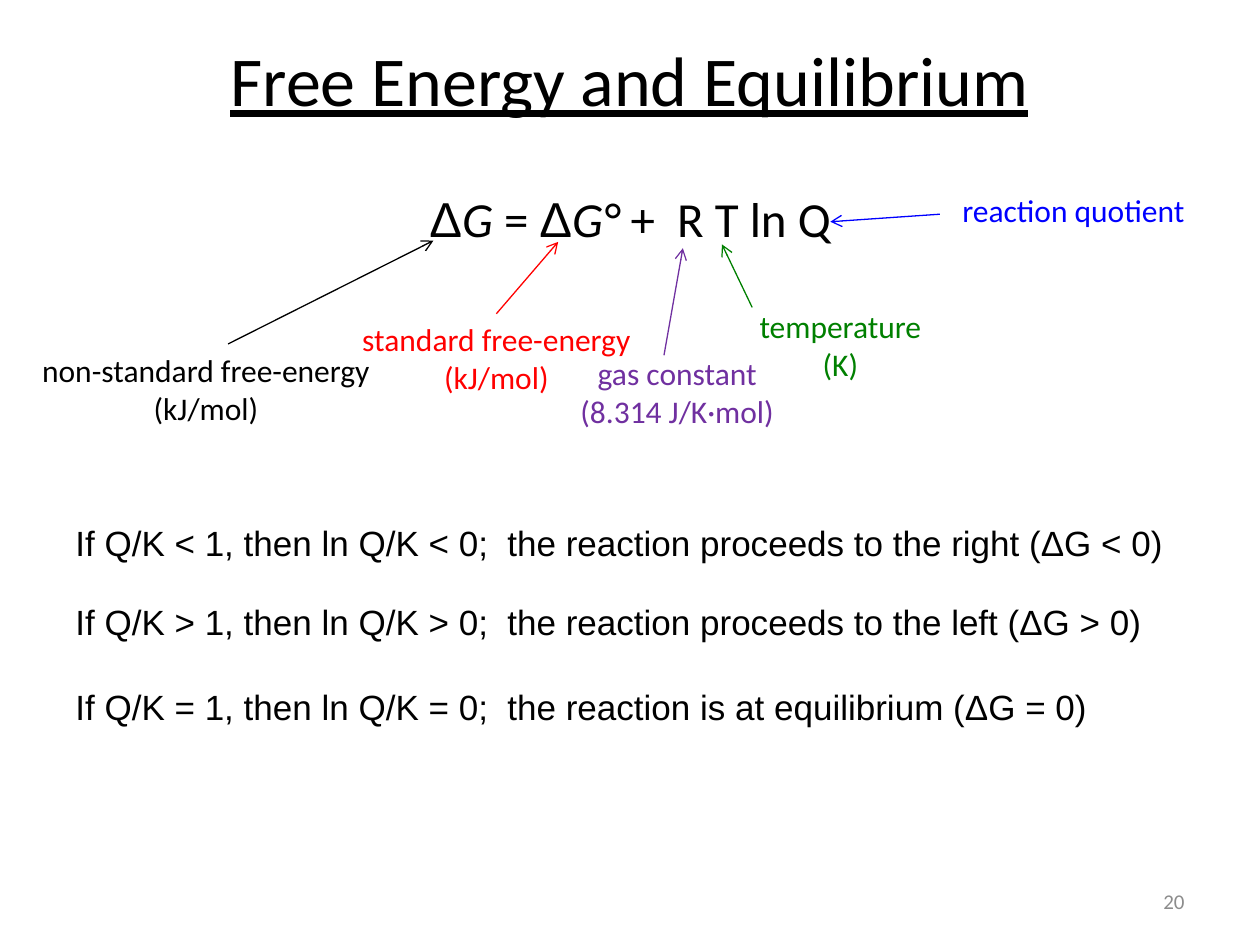
from lxml.etree import SubElement
from pptx import Presentation
from pptx.dml.color import RGBColor
from pptx.enum.shapes import MSO_CONNECTOR
from pptx.enum.text import MSO_ANCHOR, MSO_AUTO_SIZE, PP_ALIGN
from pptx.oxml.ns import qn
from pptx.util import Inches, Pt

TITLE = "Free Energy and Equilibrium"
PAGE_NUMBER = "20"
EQUATION = [
    ("Δ", "Arial", False),
    ("G ", "Calibri", True),
    ("= ", "Calibri", False),
    ("Δ", "Arial", False),
    ("G°", "Calibri", True),
    (" +  R T ln Q", "Calibri", False),
]
TERMS = [
    {"lines": ["standard free-energy", "(kJ/mol)"], "color": "FF0000",
     "place": (2.76, 2.49, 2.36), "arrow": (3.94, 2.49, 4.43, 1.92)},
    {"lines": ["gas constant", "(8.314 J/K·mol)"], "color": "7030A0",
     "place": (4.49, 2.76, 1.77), "arrow": (5.27, 2.82, 5.42, 1.97)},
    {"lines": ["temperature", "(K)"], "color": "008000",
     "place": (5.91, 2.39, 1.52), "arrow": (5.97, 2.44, 5.73, 1.94)},
    {"lines": ["reaction quotient"], "color": "0000FF",
     "place": (7.5, 1.47, 2.04), "arrow": (7.46, 1.7, 6.59, 1.76)},
    {"lines": ["non-standard free-energy", "(kJ/mol)"], "color": "000000",
     "place": (0.22, 2.74, 2.83), "arrow": (1.81, 2.73, 3.44, 1.91)},
]
CASES = [
    (4.09, "<", "the reaction proceeds to the right"),
    (4.72, ">", "the reaction proceeds to the left"),
    (5.39, "=", "the reaction is at equilibrium"),
]
ONE_LINE = {"word_wrap": False, "auto_size": MSO_AUTO_SIZE.SHAPE_TO_FIT_TEXT}


def rgb(color):
    return RGBColor.from_string(color)


def add_span(para, text, color="000000", **font_format):
    span = para.add_run()
    span.text = text
    span.font.color.rgb = rgb(color)
    for name, value in font_format.items():
        setattr(span.font, name, value)


def add_box(page, place, **frame_format):
    frame = page.shapes.add_textbox(*map(Inches, place)).text_frame
    for name, value in frame_format.items():
        setattr(frame, name, value)
    return frame


def add_arrow(page, ends, color):
    arrow = page.shapes.add_connector(MSO_CONNECTOR.STRAIGHT, *map(Inches, ends))
    arrow.line.color.rgb = rgb(color)
    arrow.line.width = Pt(0.75)
    SubElement(arrow.line._get_or_add_ln(), qn("a:tailEnd"), type="arrow")
    SubElement(arrow._element.spPr, qn("a:effectLst"))


def add_title(page):
    title = page.shapes.title
    bounds = {"left": 1.27, "top": 0, "width": 7.45, "height": 1.25}
    for name, value in bounds.items():
        setattr(title, name, Inches(value))
    frame = title.text_frame
    frame.auto_size = MSO_AUTO_SIZE.NONE
    frame.vertical_anchor = MSO_ANCHOR.MIDDLE
    para = frame.paragraphs[0]
    para.alignment = PP_ALIGN.CENTER
    para.space_before = Pt(8)
    add_span(para, TITLE, name="Calibri", size=Pt(40), underline=True)


def add_term(page, term):
    lines, color = term["lines"], term["color"]
    height = 0.1 + 0.3 * len(lines)
    frame = add_box(page, (*term["place"], height), **ONE_LINE)
    for index, line in enumerate(lines):
        para = frame.add_paragraph() if index else frame.paragraphs[0]
        para.alignment = PP_ALIGN.CENTER
        add_span(para, line, color, name="Calibri", size=Pt(18))
    add_arrow(page, term["arrow"], color)


def main():
    """Build the slide on free energy and equilibrium."""
    deck = Presentation()
    deck.slide_width, deck.slide_height = Inches(10), Inches(7.5)
    page = deck.slides.add_slide(deck.slide_layouts[5])
    add_title(page)

    equation = add_box(page, (3.31, 1.45, 3.4, 0.57), **ONE_LINE)
    for text, font, italic in EQUATION:
        add_span(equation.paragraphs[0], text, name=font, size=Pt(28), italic=italic)
    for term in TERMS:
        add_term(page, term)

    for top, sign, outcome in CASES:
        frame = add_box(page, (0.5, top, 9.08, 0.44), word_wrap=True)
        sentence = f"If Q/K {sign} 1, then ln Q/K {sign} 0;  {outcome} (ΔG {sign} 0)"
        add_span(frame.paragraphs[0], sentence, name="Arial", size=Pt(20))

    footer = add_box(page, (7.17, 6.95, 2.33, 0.4), word_wrap=True,
                     vertical_anchor=MSO_ANCHOR.MIDDLE)
    footer.paragraphs[0].alignment = PP_ALIGN.RIGHT
    add_span(footer.paragraphs[0], PAGE_NUMBER, "8C8C8C", name="Calibri", size=Pt(12))
    deck.save("out.pptx")


if __name__ == "__main__":
    main()
